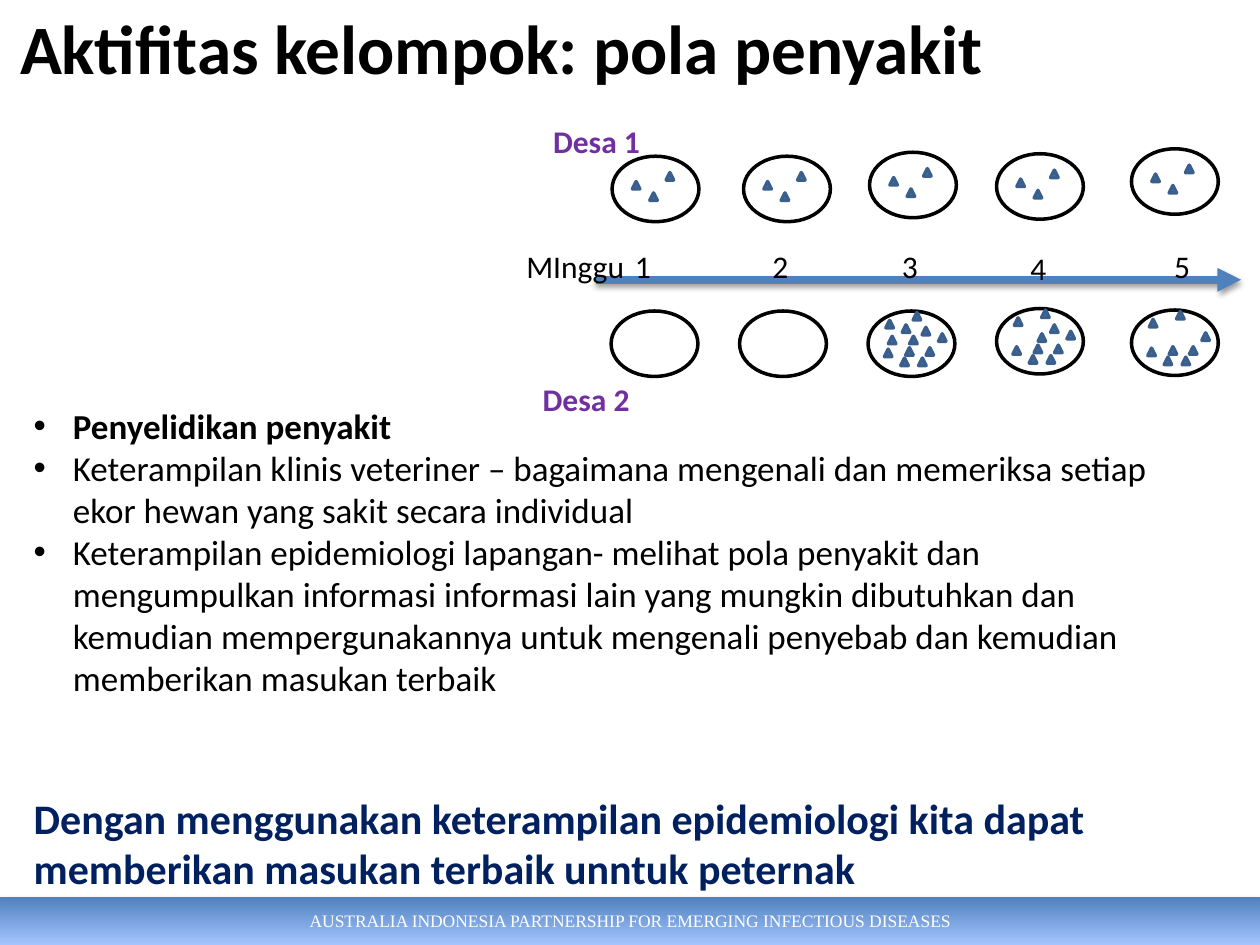
from typing import NamedTuple

from lxml import etree
from pptx import Presentation
from pptx.dml.color import RGBColor
from pptx.enum.shapes import MSO_CONNECTOR, MSO_SHAPE
from pptx.enum.text import MSO_ANCHOR, MSO_AUTO_SIZE, PP_ALIGN
from pptx.oxml import parse_xml
from pptx.oxml.ns import nsdecls, qn
from pptx.util import Cm, Pt

RECT, OVAL, PEAK = MSO_SHAPE.RECTANGLE, MSO_SHAPE.OVAL, MSO_SHAPE.ISOSCELES_TRIANGLE
LEFT, CENTER = PP_ALIGN.LEFT, PP_ALIGN.CENTER
TOP, MIDDLE = MSO_ANCHOR.TOP, MSO_ANCHOR.MIDDLE
BLACK, WHITE, BLUE, EDGE = "000000", "FFFFFF", "4F81BD", "3A5F8C"
PURPLE, NAVY, PALE = "7030A0", "002060", "A4C4FF"
SANS, SERIF = "Calibri", "Times New Roman"

OVAL_W, OVAL_H, CASE = 1.75, 1.32, 0.15


class Herd(NamedTuple):
    """A village in one week: corner of its oval and the cases inside it."""
    x: float
    y: float
    cases: tuple


class Label(NamedTuple):
    text: str
    x: float
    y: float
    w: float
    color: str = BLACK
    bold: bool = False


class Item(NamedTuple):
    text: str
    size: float = 20
    color: str = BLACK
    bold: bool = False
    bullet: bool = True
    gap: float = 0


# Case places are measured from the corner of the oval.
FEW = ((0.41, 0.51), (0.76, 0.74), (1.09, 0.33))
MANY = ((0.41, 0.51), (0.69, 0.28), (1.09, 0.33), (0.84, 0.51),
        (0.76, 0.74), (1.17, 0.74), (1.02, 0.95), (0.33, 0.77),
        (0.36, 0.19), (0.91, 0.03), (1.42, 0.46), (0.66, 0.95))

HERDS = (
    Herd(12.34, 3.15, FEW), Herd(14.99, 3.15, FEW), Herd(17.53, 3.07, FEW),
    Herd(20.09, 3.1, FEW), Herd(22.81, 3.0, FEW),
    Herd(12.32, 6.27, ()), Herd(14.91, 6.27, ()), Herd(17.5, 6.27, MANY),
    Herd(20.09, 6.22, MANY[2:]), Herd(22.81, 6.25, MANY[4:]),
)

LABELS = (
    Label("MInggu", 10.36, 4.85, 2.51),
    Label("1", 12.55, 4.85, 0.74), Label("2", 15.32, 4.85, 0.74),
    Label("3", 17.93, 4.85, 0.74), Label("4", 20.52, 4.9, 0.74),
    Label("5", 23.42, 4.85, 0.74),
    Label("Desa 1", 10.9, 2.34, 2.29, PURPLE, True),
    Label("Desa 2", 10.69, 7.54, 2.29, PURPLE, True),
)

ITEMS = (
    Item("Penyelidikan penyakit", bold=True),
    Item("Keterampilan klinis veteriner – bagaimana mengenali dan memeriksa "
         "setiap ekor hewan yang sakit secara individual"),
    Item("Keterampilan epidemiologi lapangan- melihat pola penyakit dan "
         "mengumpulkan informasi informasi lain yang mungkin dibutuhkan dan "
         "kemudian mempergunakannya untuk mengenali penyebab dan kemudian "
         "memberikan masukan terbaik"),
    Item("Dengan menggunakan keterampilan epidemiologi kita dapat memberikan "
         "masukan terbaik unntuk peternak", 24, NAVY, True, False, 53.7),
)


def rgb(code: str) -> RGBColor:
    return RGBColor.from_string(code)


def style(para, size: float, color: str, bold: bool = False, face: str = SANS) -> None:
    font = para.font
    font.name, font.size, font.bold = face, Pt(size), bold
    font.color.rgb = rgb(color)


def add_shape(slide, kind, x: float, y: float, w: float, h: float):
    shape = slide.shapes.add_shape(kind, Cm(x), Cm(y), Cm(w), Cm(h))
    shape.shadow.inherit = False
    return shape


def add_blob(slide, kind, x: float, y: float, w: float, h: float,
             fill: str, line: str) -> None:
    shape = add_shape(slide, kind, x, y, w, h)
    shape.fill.solid()
    shape.fill.fore_color.rgb = rgb(fill)
    shape.line.color.rgb = rgb(line)
    shape.line.width = Pt(2)


def add_shade(shape, alpha: int) -> None:
    """Give the shape a soft shadow that falls straight down."""
    props = shape.element.spPr
    for old in props.findall(qn("a:effectLst")):
        props.remove(old)
    props.append(parse_xml(
        f'<a:effectLst {nsdecls("a")}>'
        '<a:outerShdw blurRad="40000" dist="21500" dir="5400000" rotWithShape="0">'
        f'<a:srgbClr val="{BLACK}"><a:alpha val="{alpha * 1000}"/></a:srgbClr>'
        '</a:outerShdw></a:effectLst>'))


def add_band(slide) -> None:
    band = add_shape(slide, RECT, 0, 18.08, 25.4, 0.97)
    band.fill.gradient()
    band.fill.gradient_angle = 270
    for stop, code, place in zip(band.fill.gradient_stops, (BLUE, PALE), (0, 1)):
        stop.color.rgb = rgb(code)
        stop.position = place
    band.line.fill.background()
    add_shade(band, 35)
    frame = band.text_frame
    frame.vertical_anchor = MIDDLE
    para = frame.paragraphs[0]
    para.text = "AUSTRALIA INDONESIA PARTNERSHIP FOR EMERGING INFECTIOUS DISEASES"
    para.alignment = CENTER
    style(para, 10, WHITE, face=SERIF)


def add_title(slide) -> None:
    title = slide.shapes.title
    title.left, title.top = Cm(0.15), Cm(-0.03)
    title.width, title.height = Cm(22.86), Cm(1.96)
    frame = title.text_frame
    frame.auto_size = MSO_AUTO_SIZE.NONE
    frame.vertical_anchor = MIDDLE
    para = frame.paragraphs[0]
    para.text = "Aktifitas kelompok: pola penyakit"
    para.alignment = LEFT
    style(para, 39.6, BLACK, True)


def add_arrow(slide) -> None:
    arrow = slide.shapes.add_connector(
        MSO_CONNECTOR.STRAIGHT, Cm(12.01), Cm(5.64), Cm(25.02), Cm(5.64))
    arrow.line.color.rgb = rgb(BLUE)
    arrow.line.width = Pt(4.5)
    etree.SubElement(arrow.line._get_or_add_ln(), qn("a:tailEnd"), type="triangle")
    add_shade(arrow, 38)


def add_label(slide, label: Label) -> None:
    box = slide.shapes.add_textbox(Cm(label.x), Cm(label.y), Cm(label.w), Cm(1.02))
    box.text_frame.word_wrap = False
    para = box.text_frame.paragraphs[0]
    para.text = label.text
    style(para, 18, label.color, label.bold)


def add_herd(slide, herd: Herd) -> None:
    add_blob(slide, OVAL, herd.x, herd.y, OVAL_W, OVAL_H, WHITE, BLACK)
    for dx, dy in herd.cases:
        add_blob(slide, PEAK, herd.x + dx, herd.y + dy, CASE, CASE, BLUE, EDGE)


def add_body(slide) -> None:
    box = slide.shapes.add_textbox(Cm(0.43), Cm(8.03), Cm(24.03), Cm(10.95))
    frame = box.text_frame
    frame.word_wrap = True
    frame.vertical_anchor = TOP
    for i, item in enumerate(ITEMS):
        para = frame.add_paragraph() if i else frame.paragraphs[0]
        para.text = item.text
        if item.bullet:
            props = para._p.get_or_add_pPr()
            props.set("marL", str(Cm(0.79)))
            props.set("indent", str(-Cm(0.79)))
            etree.SubElement(props, qn("a:buFont"), typeface="Arial")
            etree.SubElement(props, qn("a:buChar"), char="•")
        if item.gap:
            para.space_before = Pt(item.gap)
        style(para, item.size, item.color, item.bold)


def main() -> None:
    deck = Presentation()
    deck.slide_width, deck.slide_height = Cm(25.4), Cm(19.05)
    slide = deck.slides.add_slide(deck.slide_layouts[5])
    add_band(slide)
    add_title(slide)
    add_arrow(slide)
    for label in LABELS:
        add_label(slide, label)
    for herd in HERDS:
        add_herd(slide, herd)
    add_body(slide)
    deck.save("out.pptx")


if __name__ == "__main__":
    main()
